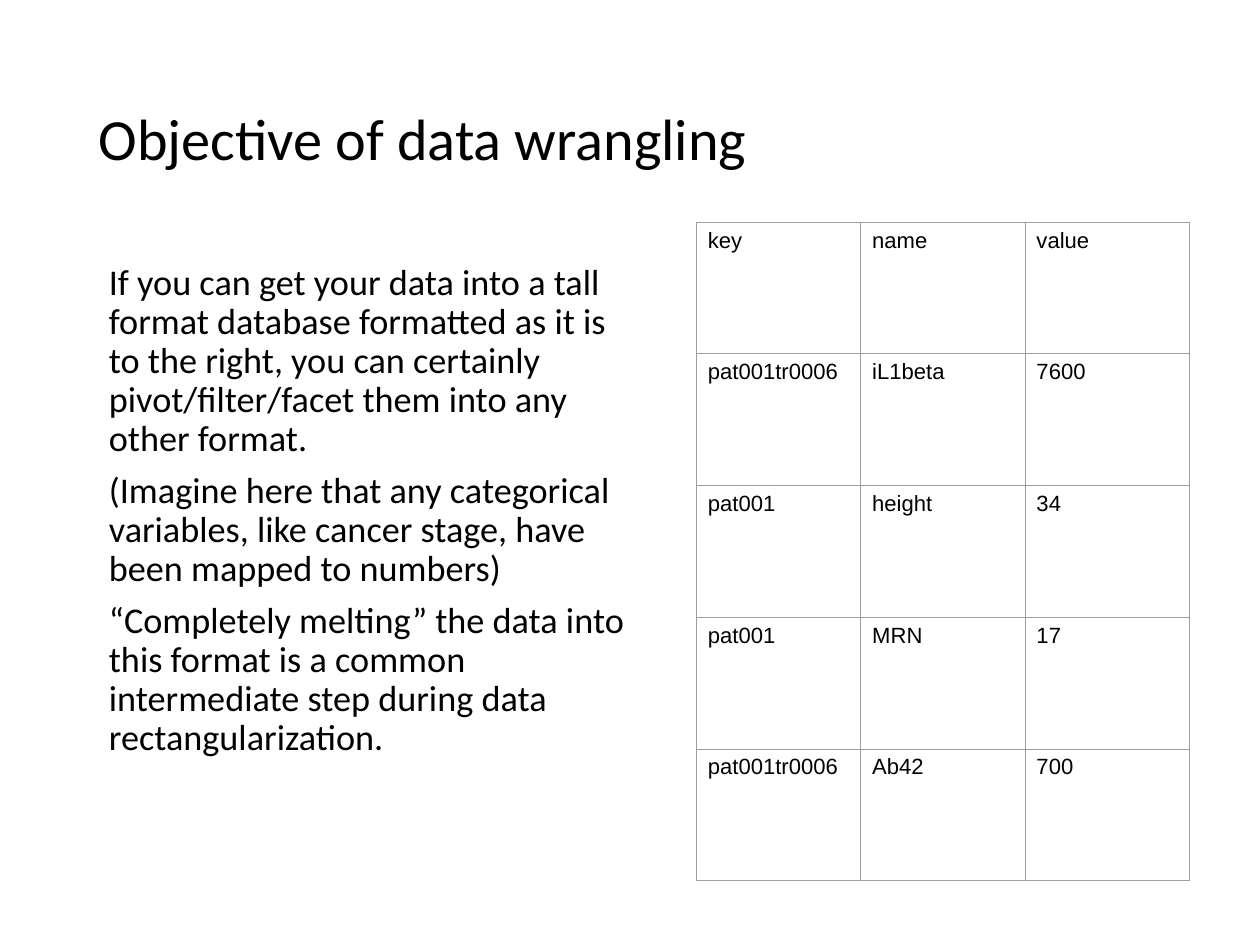
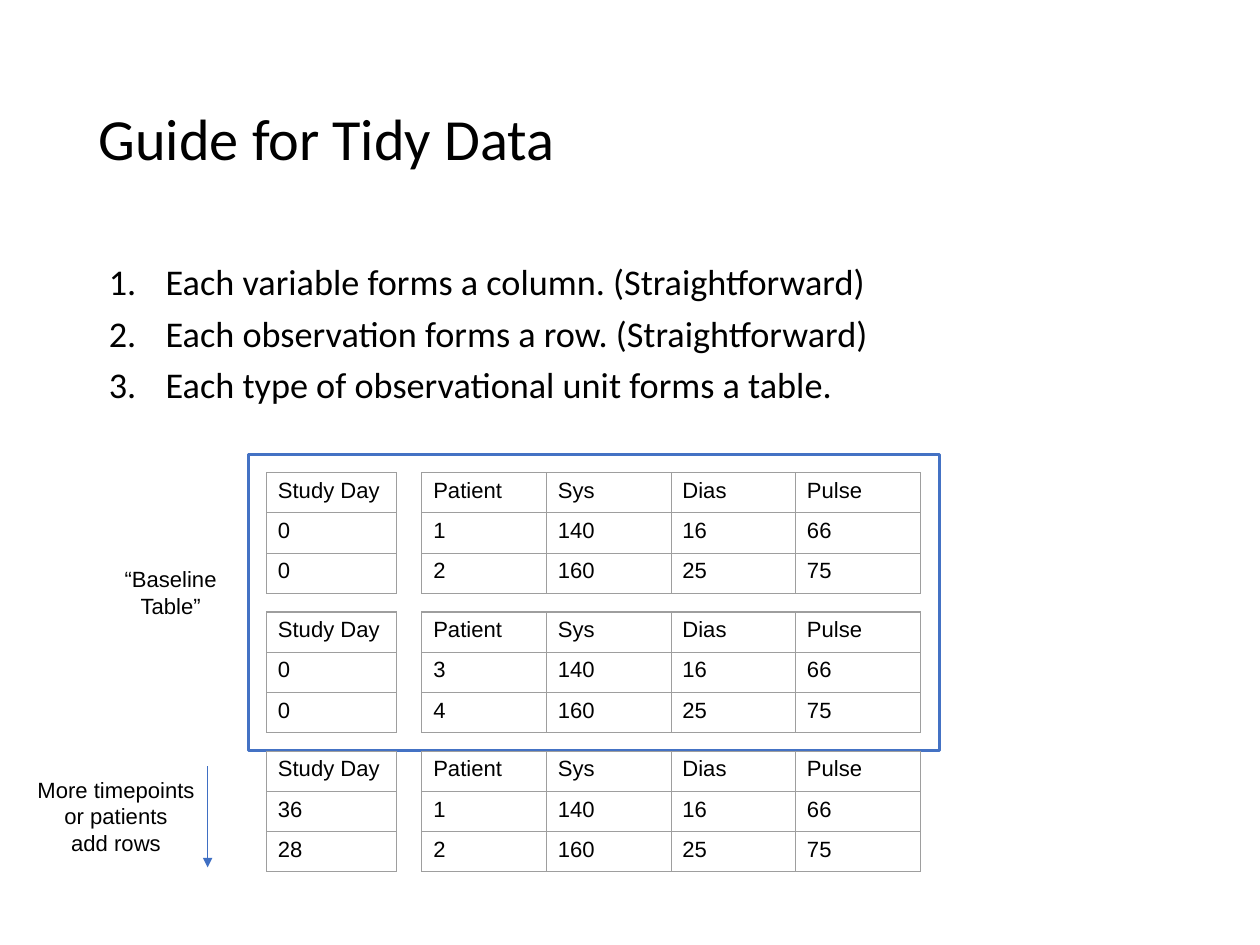
"""Two slides on data wrangling and tidy data."""
from lxml.etree import SubElement as Sub
from pptx import Presentation
from pptx.dml.color import RGBColor as RGB
from pptx.enum.shapes import MSO_CONNECTOR as Link, MSO_SHAPE as Shape
from pptx.enum.text import MSO_ANCHOR as Anchor, PP_ALIGN as Align
from pptx.oxml.ns import qn
from pptx.util import Cm, Pt

BLACK = RGB(0x00, 0x00, 0x00)
WHITE = RGB(0xFF, 0xFF, 0xFF)
GREY = RGB(0x9E, 0x9E, 0x9E)
BLUE = RGB(0x44, 0x72, 0xC4)
ARROW = RGB(0x3F, 0x6F, 0xC3)

GOAL = [
    "If you can get your data into a tall format database formatted as it is "
    "to the right, you can certainly pivot/filter/facet them into any other format.",
    "(Imagine here that any categorical variables, like cancer stage, "
    "have been mapped to numbers)",
    "“Completely melting” the data into this format is a common intermediate "
    "step during data rectangularization.",
]
TALL = [
    ("key", "name", "value"),
    ("pat001tr0006", "iL1beta", "7600"),
    ("pat001", "height", "34"),
    ("pat001", "MRN", "17"),
    ("pat001tr0006", "Ab42", "700"),
]
RULES = [
    "Each variable forms a column. (Straightforward)",
    "Each observation forms a row. (Straightforward)",
    "Each type of observational unit forms a table.",
]
HEAD = ("Patient", "Sys", "Dias", "Pulse")
VITALS = [("140", "16", "66"), ("160", "25", "75")]
VISITS = [(("0", "0"), ("1", "2")), (("0", "0"), ("3", "4")), (("36", "28"), ("1", "2"))]
BASE = ["“Baseline", "Table”"]
MORE = ["More timepoints", "or patients", "add rows"]

LEFT, WIDE = 1.93, 24.33
INSET = 0.28


def write(frame, lines, size=14, font="Arial", aligns=(Align.LEFT,), inset=None,
          space=None, before=0, indent=None, number=False):
    """Fill a text frame; the last alignment serves all further lines."""
    if inset is not None:
        frame.margin_left = frame.margin_right = Cm(inset)
        frame.margin_top = frame.margin_bottom = Cm(inset)
    for i, line in enumerate(lines):
        para = frame.paragraphs[0] if i == 0 else frame.add_paragraph()
        para.alignment = aligns[min(i, len(aligns) - 1)]
        para.space_before = Pt(before)
        if space:
            para.line_spacing = space
        props = para._p.get_or_add_pPr()
        if indent:
            props.set("marL", str(Cm(indent[0])))
            props.set("indent", str(Cm(indent[1])))
        if number:
            Sub(props, qn("a:buFont"), typeface="Calibri")
            Sub(props, qn("a:buAutoNum"), type="arabicPeriod")
        run = para.add_run()
        run.text = line
        run.font.size, run.font.name = Pt(size), font
        run.font.bold = False
        run.font.color.rgb = BLACK


def text(slide, box, lines, wrap=True, **form):
    """Add a text box."""
    frame = slide.shapes.add_textbox(*map(Cm, box)).text_frame
    frame.word_wrap = wrap
    write(frame, lines, **form)


def start(deck, title):
    """Add a slide with its title."""
    slide = deck.slides.add_slide(deck.slide_layouts[5])
    head = slide.shapes.title
    head.left, head.top, head.width, head.height = map(Cm, (LEFT, 1.12, WIDE, 4.09))
    head.text_frame.vertical_anchor = Anchor.MIDDLE
    write(head.text_frame, [title], size=37, font="Calibri", inset=INSET, space=0.9)
    return slide


def body(slide, width, lines, **form):
    """Add the main text."""
    text(slide, (LEFT, 5.64, width, 13.44), lines, size=23, font="Calibri",
         inset=INSET, space=0.9, before=8, **form)


def edge(cell):
    """Draw the four borders of a cell."""
    props = cell._tc.get_or_add_tcPr()
    for side in ("lnL", "lnR", "lnT", "lnB"):
        line = Sub(props, qn("a:" + side), w=str(Pt(0.75)))
        Sub(Sub(line, qn("a:solidFill")), qn("a:srgbClr"), val=str(GREY))


def grid(slide, left, top, wide, high, rows):
    """Add a plain table of equal cells."""
    count = len(rows[0])
    table = slide.shapes.add_table(len(rows), count, Cm(left), Cm(top),
                                   Cm(wide * count), Cm(high * len(rows))).table
    table.first_row = table.horz_banding = False
    for col in table.columns:
        col.width = Cm(wide)
    for row, words in zip(table.rows, rows):
        row.height = Cm(high)
        for cell, word in zip(row.cells, words):
            edge(cell)
            cell.fill.background()
            write(cell.text_frame, [word])


def frame(slide, box):
    """Add the blue box behind the baseline tables."""
    shape = slide.shapes.add_shape(Shape.RECTANGLE, *map(Cm, box))
    shape.shadow.inherit = False
    shape.fill.solid()
    shape.fill.fore_color.rgb = WHITE
    shape.line.color.rgb = BLUE
    shape.line.width = Pt(2)


def arrow(slide, *ends):
    """Add an arrow between two points."""
    link = slide.shapes.add_connector(Link.STRAIGHT, *map(Cm, ends))
    link.line.color.rgb = ARROW
    link.line.width = Pt(0.75)
    Sub(link.line._get_or_add_ln(), qn("a:tailEnd"), type="triangle")
    Sub(link._element.spPr, qn("a:effectLst"))


def main():
    """Build and save the deck."""
    deck = Presentation()
    deck.slide_width, deck.slide_height = Cm(28.22), Cm(21.17)

    slide = start(deck, "Objective of data wrangling")
    body(slide, 12.37, GOAL, indent=(0.23, 0))
    grid(slide, 15.6, 4.98, 3.68, 2.95, TALL)

    slide = start(deck, "Guide for Tidy Data")
    body(slide, WIDE, RULES, indent=(1.5, -1.27), number=True)
    frame(slide, (5.56, 10.19, 15.49, 6.63))
    for i, (days, names) in enumerate(VISITS):
        top = 10.59 + 3.12 * i
        grid(slide, 5.97, top, 2.92, 0.9, [("Study Day",)] + [(day,) for day in days])
        rows = [(name, *vital) for name, vital in zip(names, VITALS)]
        grid(slide, 9.45, top, 2.79, 0.9, [HEAD] + rows)
    text(slide, (2.54, 12.55, 2.59, 1.45), BASE, wrap=False, aligns=(Align.LEFT, Align.CENTER))
    arrow(slide, 4.65, 17.17, 4.65, 19.43)
    text(slide, (0.58, 17.27, 4.04, 2.06), MORE, wrap=False, aligns=(Align.CENTER,))
    deck.save("out.pptx")


if __name__ == "__main__":
    main()
